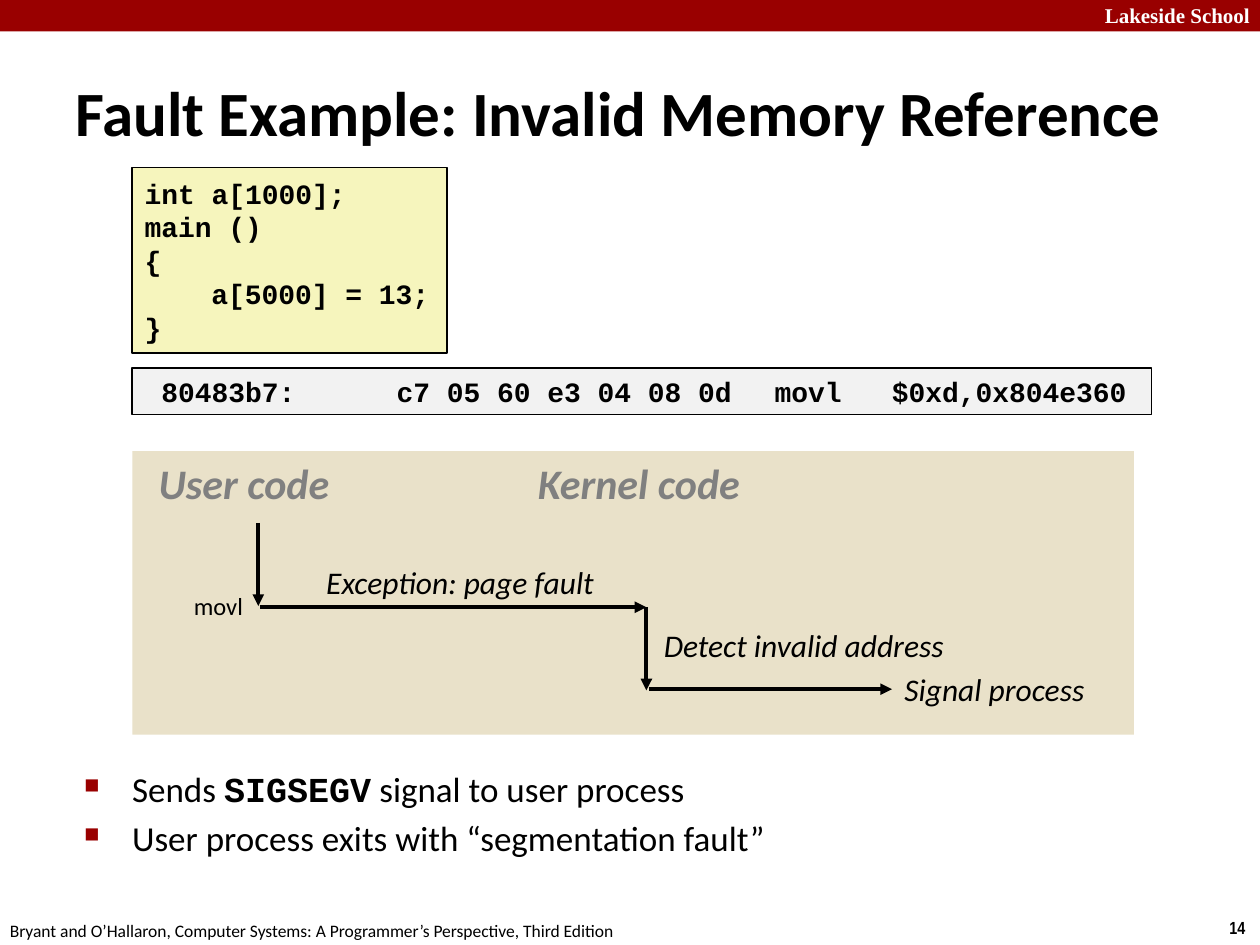
from lxml import etree
from pptx import Presentation
from pptx.dml.color import RGBColor
from pptx.enum import shapes, text
from pptx.oxml import ns
from pptx.util import Inches, Pt

COLUMNS, ROWS = 100, 75
BLACK = RGBColor(0x00, 0x00, 0x00)
WHITE = RGBColor(0xFF, 0xFF, 0xFF)
RED = RGBColor(0x99, 0x00, 0x00)
GRAY = RGBColor(0x80, 0x80, 0x80)
YELLOW = RGBColor(0xF6, 0xF5, 0xBD)
SILVER = RGBColor(0xF2, 0xF2, 0xF2)
SAND = RGBColor(0xE9, 0xE1, 0xC9)
SANS, MONO = "Calibri", "Courier New"
CODE = {"font": MONO, "size": 16, "bold": True}


def add_xml(parent, tag, **attributes):
    return etree.SubElement(parent, ns.qn(tag), attributes)


def add_span(para, words, size=18, font=SANS, color=BLACK, bold=False, italic=False):
    span = para.add_run()
    span.text = words
    span.font.size = Pt(size)
    span.font.name = font
    span.font.color.rgb = color
    span.font.bold = bold
    span.font.italic = italic


class SlideBuilder:
    def __init__(self, deck):
        deck.slide_width, deck.slide_height = Inches(10), Inches(7.5)
        self.column = deck.slide_width / COLUMNS
        self.row = deck.slide_height / ROWS
        self.page = deck.slides.add_slide(deck.slide_layouts[6])

    def place(self, left, top, width, height):
        return (round(left * self.column), round(top * self.row),
                round(width * self.column), round(height * self.row))

    def panel(self, area, fill, outlined=False):
        box = self.page.shapes.add_shape(shapes.MSO_SHAPE.RECTANGLE, *self.place(*area))
        box.shadow.inherit = False
        box.fill.solid()
        box.fill.fore_color.rgb = fill
        if outlined:
            box.line.color.rgb = BLACK
            box.line.width = Pt(1)
        else:
            box.line.fill.background()
        return box

    def label(self, area, words, align=text.PP_ALIGN.LEFT,
              anchor=text.MSO_ANCHOR.TOP, **style):
        box = self.page.shapes.add_textbox(*self.place(*area))
        box.text_frame.word_wrap = False
        box.text_frame.vertical_anchor = anchor
        para = box.text_frame.paragraphs[0]
        para.alignment = align
        add_span(para, words, **style)

    def code(self, area, fill, lines, tabs=()):
        frame = self.panel(area, fill, outlined=True).text_frame
        frame.word_wrap = True
        frame.vertical_anchor = text.MSO_ANCHOR.MIDDLE
        for number, (indent, words) in enumerate(lines):
            para = frame.add_paragraph() if number else frame.paragraphs[0]
            para.alignment = text.PP_ALIGN.LEFT
            properties = para._p.get_or_add_pPr()
            properties.set("marL", str(round(indent * self.column)))
            if tabs:
                stops = add_xml(properties, "a:tabLst")
                for stop in tabs:
                    add_xml(stops, "a:tab", pos=str(round(stop * self.column)), algn="l")
            add_span(para, words, **CODE)

    def bullets(self, area, items, hang):
        box = self.page.shapes.add_textbox(*self.place(*area))
        frame = box.text_frame
        frame.word_wrap = True
        margin = round(hang * self.column)
        for number, spans in enumerate(items):
            para = frame.add_paragraph() if number else frame.paragraphs[0]
            para.space_before = Pt(4)
            properties = para._p.get_or_add_pPr()
            properties.set("marL", str(margin))
            properties.set("indent", str(-margin))
            add_xml(add_xml(properties, "a:buClr"), "a:srgbClr", val=str(RED))
            add_xml(properties, "a:buSzPct", val="60000")
            add_xml(properties, "a:buChar", char="■")
            for words, style in spans:
                add_span(para, words, size=20, **style)

    def arrow(self, left, top, right, bottom):
        start_x, start_y, end_x, end_y = self.place(left, top, right, bottom)
        line = self.page.shapes.add_connector(
            shapes.MSO_CONNECTOR.STRAIGHT, start_x, start_y, end_x, end_y)
        line.line.color.rgb = BLACK
        line.line.width = Pt(2.25)
        add_xml(line.line._get_or_add_ln(), "a:tailEnd", type="triangle")
        add_xml(line._element.spPr, "a:effectLst")


def main():
    deck = Presentation()
    slide = SlideBuilder(deck)

    slide.panel((0, 0, COLUMNS, 2.5), RED)
    slide.label((86.4, -0.3, 13.8, 3), "Lakeside School", align=text.PP_ALIGN.RIGHT,
                size=12, font="Times New Roman", color=WHITE, bold=True)
    slide.label((96.6, 72.3, 3.4, 2.7), "14", size=10, font="Arial Narrow", bold=True)
    slide.label((-0.2, 72.5, 50.8, 2.7),
                "Bryant and O’Hallaron, Computer Systems: "
                "A Programmer’s Perspective, Third Edition", size=10)
    slide.label((5, 5.8, 95, 6.1), "Fault Example: Invalid Memory Reference",
                anchor=text.MSO_ANCHOR.MIDDLE, size=36, bold=True)
    slide.bullets((5.7, 60.4, 73.3, 9.6), [
        [("Sends ", {}), ("SIGSEGV", {"font": MONO, "bold": True}),
         (" signal to user process", {})],
        [("User process exits with “segmentation fault”", {})],
    ], hang=3.8)

    slide.code((10.5, 13.3, 25, 14.7), YELLOW, [
        (0, "int a[1000];"), (0, "main ()"), (0, "{"), (5.3, "a[5000] = 13;"), (0, "}")])
    slide.code((10.5, 29.2, 80.9, 3.7), SILVER,
               [(0, " 80483b7:\tc7 05 60 e3 04 08 0d\tmovl\t$0xd,0x804e360")],
               tabs=(20, 50, 59.3))

    slide.panel((10.5, 35.8, 79.5, 22.5), SAND)
    for left, width, words in ((11.6, 16.5, "User code"), (41.7, 19.1, "Kernel code")):
        slide.label((left, 35.8, width, 5), words,
                    size=24, color=GRAY, bold=True, italic=True)
    for ends in ((20.5, 41.5, 20.5, 48.1), (20.6, 48.2, 51.3, 48.2),
                 (51.3, 48.2, 51.3, 54.8), (51.5, 54.7, 70.8, 54.7)):
        slide.arrow(*ends)
    for left, top, width, words in ((24.9, 44.2, 24.2, "Exception: page fault"),
                                    (51.7, 49.2, 25, "Detect invalid address"),
                                    (70.8, 52.7, 17.5, "Signal process")):
        slide.label((left, top, width, 4), words, italic=True)
    slide.label((14.4, 46.4, 6, 3.4), "movl", size=14)

    deck.save("out.pptx")


if __name__ == "__main__":
    main()
